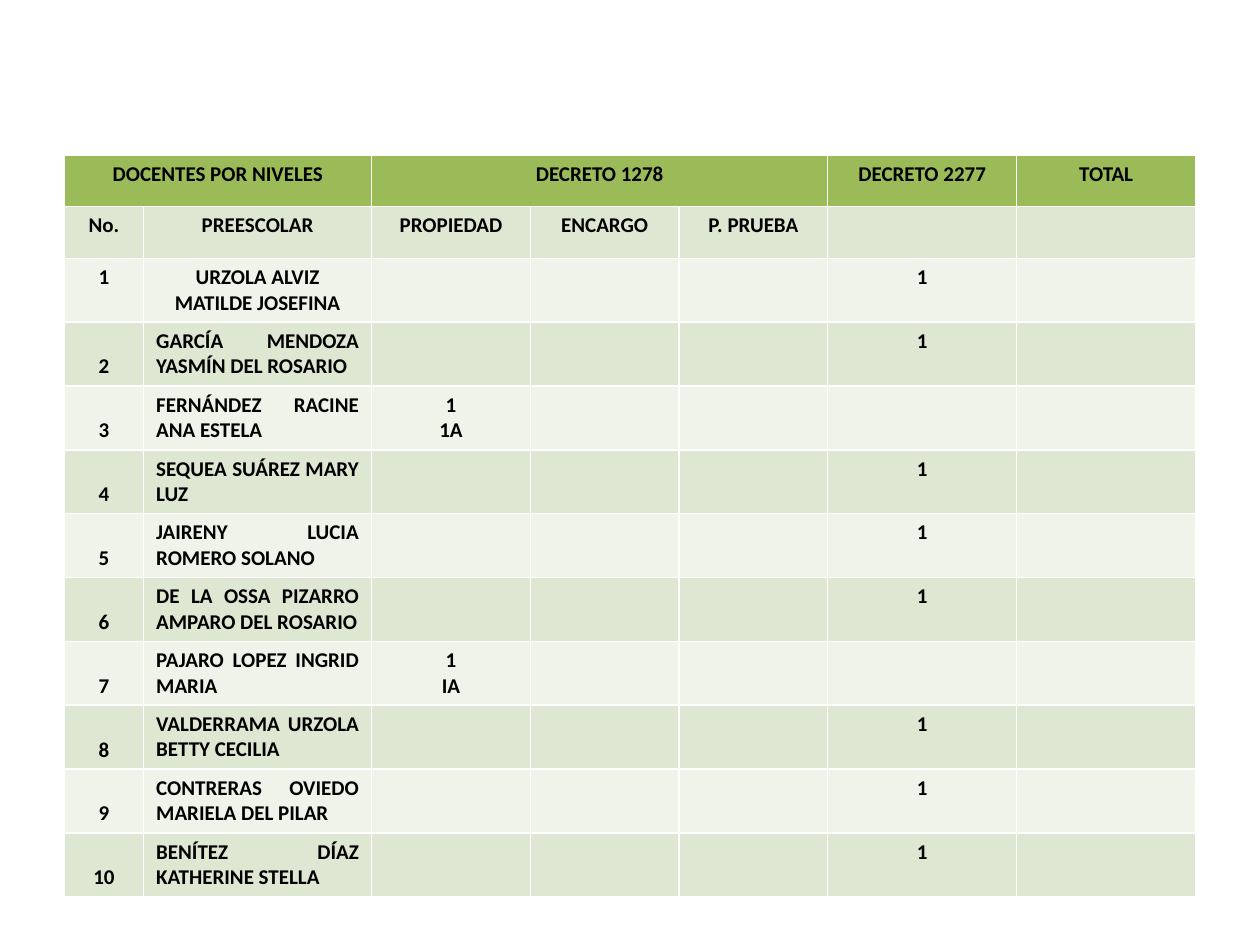
"""Build a slide with a table of preschool teachers by decree."""
from pptx import Presentation
from pptx.dml.color import RGBColor
from pptx.enum import text
from pptx.util import Inches, Pt

COLORS = {"head": "9BBB59", "dark": "DEE7D1", "light": "EFF3EA", "text": "000000"}
FONT = {"name": "Calibri", "size": Pt(12), "bold": True}
LEFT, TOP, ROW_H = 0.51, 1.23, 0.41
COL_W = [0.63, 1.81, 1.26, 1.18, 1.18, 1.5, 1.42]
SPANS = [(0, 1), (2, 4)]
HEAD = ["DOCENTES POR NIVELES", "", "DECRETO 1278", "", "", "DECRETO 2277", "TOTAL"]
SUBHEAD = ["No.", "PREESCOLAR", "PROPIEDAD", "ENCARGO", "P. PRUEBA", "", ""]
TEACHERS = [
    ("URZOLA ALVIZ MATILDE JOSEFINA", "", "1"),
    ("GARCÍA MENDOZA YASMÍN DEL ROSARIO", "", "1"),
    ("FERNÁNDEZ RACINE ANA ESTELA", "1\n1A", ""),
    ("SEQUEA SUÁREZ MARY LUZ", "", "1"),
    ("JAIRENY LUCIA ROMERO SOLANO", "", "1"),
    ("DE LA OSSA PIZARRO AMPARO DEL ROSARIO", "", "1"),
    ("PAJARO LOPEZ INGRID MARIA", "1\nIA", ""),
    ("VALDERRAMA URZOLA BETTY CECILIA", "", "1"),
    ("CONTRERAS OVIEDO MARIELA DEL PILAR", "", "1"),
    ("BENÍTEZ DÍAZ KATHERINE STELLA", "", "1"),
]


def fill_cell(cell, value, color, align, anchor):
    cell.fill.solid()
    cell.fill.fore_color.rgb = RGBColor.from_string(COLORS[color])
    cell.vertical_anchor = anchor
    cell.text = value
    for p in cell.text_frame.paragraphs:
        p.alignment = align
        for key, setting in FONT.items():
            setattr(p.font, key, setting)
        for r in p.runs:
            for key, setting in FONT.items():
                setattr(r.font, key, setting)
            r.font.color.rgb = RGBColor.from_string(COLORS["text"])


def main():
    prs = Presentation()
    prs.slide_width, prs.slide_height = Inches(10), Inches(7.5)
    slide = prs.slides.add_slide(prs.slide_layouts[6])
    rows = [HEAD, SUBHEAD] + [
        [str(n), name, owned, "", "", decree, ""]
        for n, (name, owned, decree) in enumerate(TEACHERS, 1)
    ]
    table = slide.shapes.add_table(
        len(rows), len(COL_W), Inches(LEFT), Inches(TOP),
        Inches(sum(COL_W)), Inches(ROW_H * len(rows)),
    ).table
    for col, width in zip(table.columns, COL_W):
        col.width = Inches(width)
    for row in table.rows:
        row.height = Inches(ROW_H)
    for first, last in SPANS:
        table.cell(0, first).merge(table.cell(0, last))

    for i, values in enumerate(rows):
        color = "head" if i == 0 else ("light", "dark")[i % 2]
        for j, value in enumerate(values):
            justified = i > 2 and j == 1
            low = i > 2 and j == 0
            align = text.PP_ALIGN.JUSTIFY if justified else text.PP_ALIGN.CENTER
            anchor = text.MSO_ANCHOR.BOTTOM if low else text.MSO_ANCHOR.TOP
            fill_cell(table.cell(i, j), value, color, align, anchor)
    prs.save("out.pptx")


if __name__ == "__main__":
    main()
